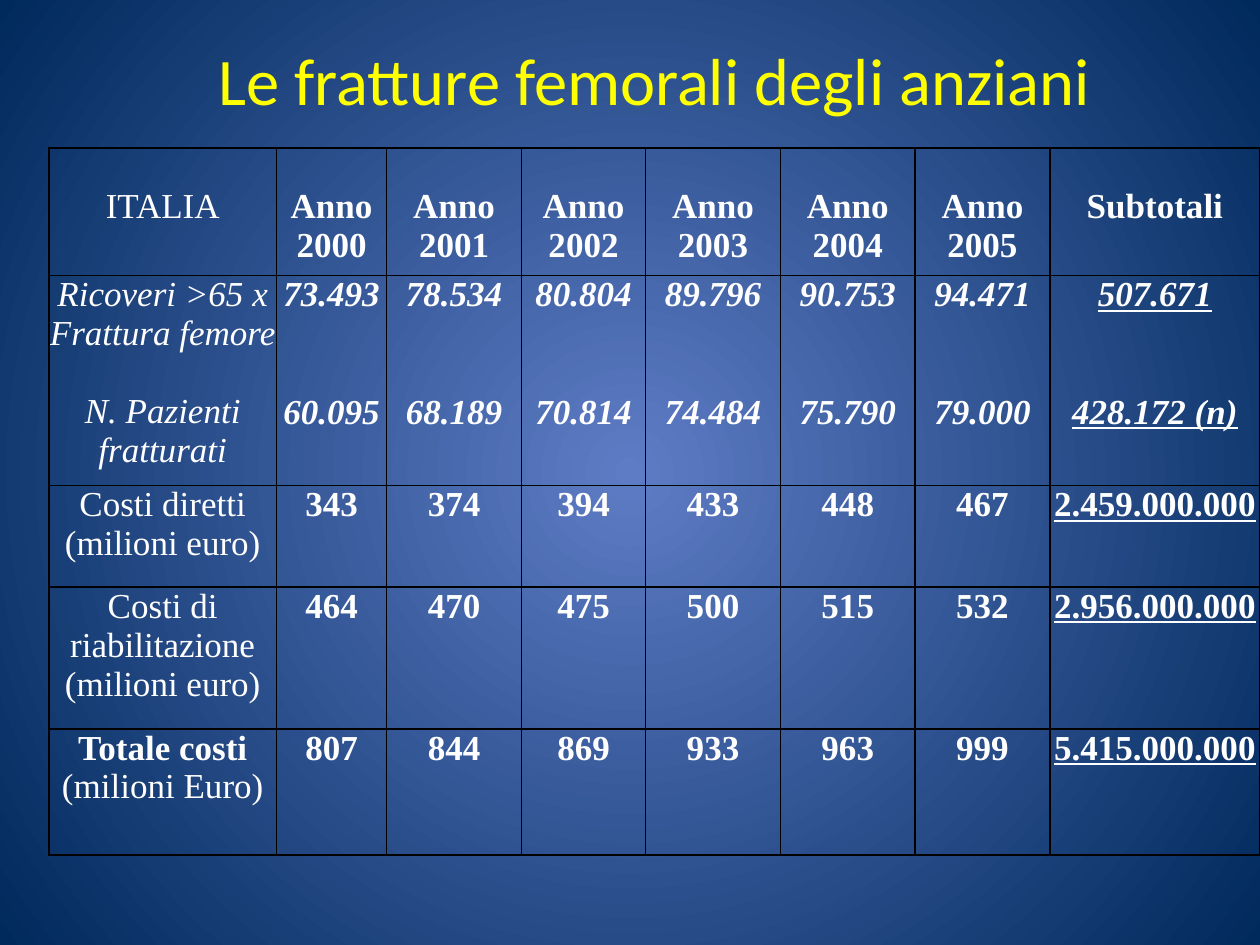
from dataclasses import dataclass

from lxml.etree import SubElement
from pptx import Presentation
from pptx.dml.color import RGBColor
from pptx.enum.text import MSO_ANCHOR, PP_ALIGN
from pptx.oxml.ns import qn
from pptx.util import Pt


@dataclass(frozen=True)
class Theme:
    """Colours, fonts and type sizes of the slide."""
    center: str = "5E7CC5"
    edge: str = "00295C"
    title: str = "FFFF00"
    text: str = "FFFFFF"
    border: str = "000000"
    title_font: str = "Calibri"
    table_font: str = "Times New Roman"
    title_size: float = 38
    table_size: float = 20
    line: float = 22.5


THEME = Theme()
LEFT, WIDTH = 28, 692
COLUMNS = [130, 63, 77, 71, 77, 77, 77, 120]
HEIGHTS = [73, 120, 58, 81, 72]
ROWS = [
    ["ITALIA", *(f"Anno {year}" for year in range(2000, 2006)), "Subtotali"],
    ["Ricoveri >65 x Frattura femore\nN. Pazienti fratturati",
     "73.493\n60.095", "78.534\n68.189", "80.804\n70.814", "89.796\n74.484",
     "90.753\n75.790", "94.471\n79.000", "507.671\n428.172 (n)"],
    ["Costi diretti\n(milioni euro)",
     "343", "374", "394", "433", "448", "467", "2.459.000.000"],
    ["Costi di riabilitazione\n(milioni euro)",
     "464", "470", "475", "500", "515", "532", "2.956.000.000"],
    ["Totale costi\n(milioni Euro)",
     "807", "844", "869", "933", "963", "999", "5.415.000.000"],
]
HEADER, PATIENTS = 0, 1
LABEL, SUBTOTAL = 0, len(COLUMNS) - 1


def set_background(s):
    """Fill the slide with a radial gradient."""
    fill = s.background.fill
    fill.gradient()
    for stop, color in zip(fill.gradient_stops, (THEME.center, THEME.edge)):
        stop.color.rgb = RGBColor.from_string(color)
    grad = s.element.find(".//" + qn("a:gradFill"))
    grad.remove(grad.find(qn("a:lin")))
    circle = SubElement(grad, qn("a:path"), path="circle")
    SubElement(circle, qn("a:fillToRect"), l="50000", t="50000", r="50000", b="50000")


def style_paragraph(p, font, size, color):
    """Centre a paragraph and return its formatted run's font."""
    p.alignment = PP_ALIGN.CENTER
    f = p.runs[0].font
    f.name, f.size = font, Pt(size)
    f.color.rgb = RGBColor.from_string(color)
    return f


def add_title(s, text):
    """Add the slide title."""
    tf = s.shapes.add_textbox(Pt(LEFT), Pt(0), Pt(WIDTH), Pt(90)).text_frame
    tf.word_wrap = True
    tf.vertical_anchor = MSO_ANCHOR.MIDDLE
    tf.text = text
    style_paragraph(tf.paragraphs[0], THEME.title_font, THEME.title_size, THEME.title)


def set_borders(cell):
    """Draw a thin line on each side of a cell."""
    tc_pr = cell._tc.get_or_add_tcPr()
    for side in ("lnL", "lnR", "lnT", "lnB"):
        ln = SubElement(tc_pr, qn(f"a:{side}"), w=str(Pt(1)))
        solid = SubElement(ln, qn("a:solidFill"))
        SubElement(solid, qn("a:srgbClr"), val=THEME.border)


def fill_cell(cell, text, row, col):
    """Write a cell and format it by its place in the table."""
    set_borders(cell)
    cell.fill.background()
    cell.margin_left = cell.margin_right = cell.margin_bottom = Pt(0)
    cell.margin_top = Pt(THEME.line if row == HEADER else 0)
    tf = cell.text_frame
    tf.text = text
    for i, p in enumerate(tf.paragraphs):
        f = style_paragraph(p, THEME.table_font, THEME.table_size, THEME.text)
        f.bold = col != LABEL or p.text == "Totale costi"
        f.italic = row == PATIENTS
        f.underline = col == SUBTOTAL and row != HEADER
        if row == PATIENTS and i:
            p.space_before = Pt(THEME.line * (1 if col == LABEL else 2))


def add_cost_table(s):
    """Add the table of fractures and costs by year."""
    table = s.shapes.add_table(len(ROWS), len(COLUMNS), Pt(LEFT), Pt(84.5),
                               Pt(WIDTH), Pt(sum(HEIGHTS))).table
    table.first_row = table.horz_banding = False
    for column, width in zip(table.columns, COLUMNS):
        column.width = Pt(width)
    for row, height in enumerate(HEIGHTS):
        table.rows[row].height = Pt(height)
        for col, text in enumerate(ROWS[row]):
            fill_cell(table.cell(row, col), text, row, col)


def main():
    """Build and save the slide."""
    prs = Presentation()
    prs.slide_width, prs.slide_height = Pt(720), Pt(540)
    s = prs.slides.add_slide(prs.slide_layouts[6])
    set_background(s)
    add_title(s, "Le fratture femorali degli anziani")
    add_cost_table(s)
    prs.save("out.pptx")


if __name__ == "__main__":
    main()
